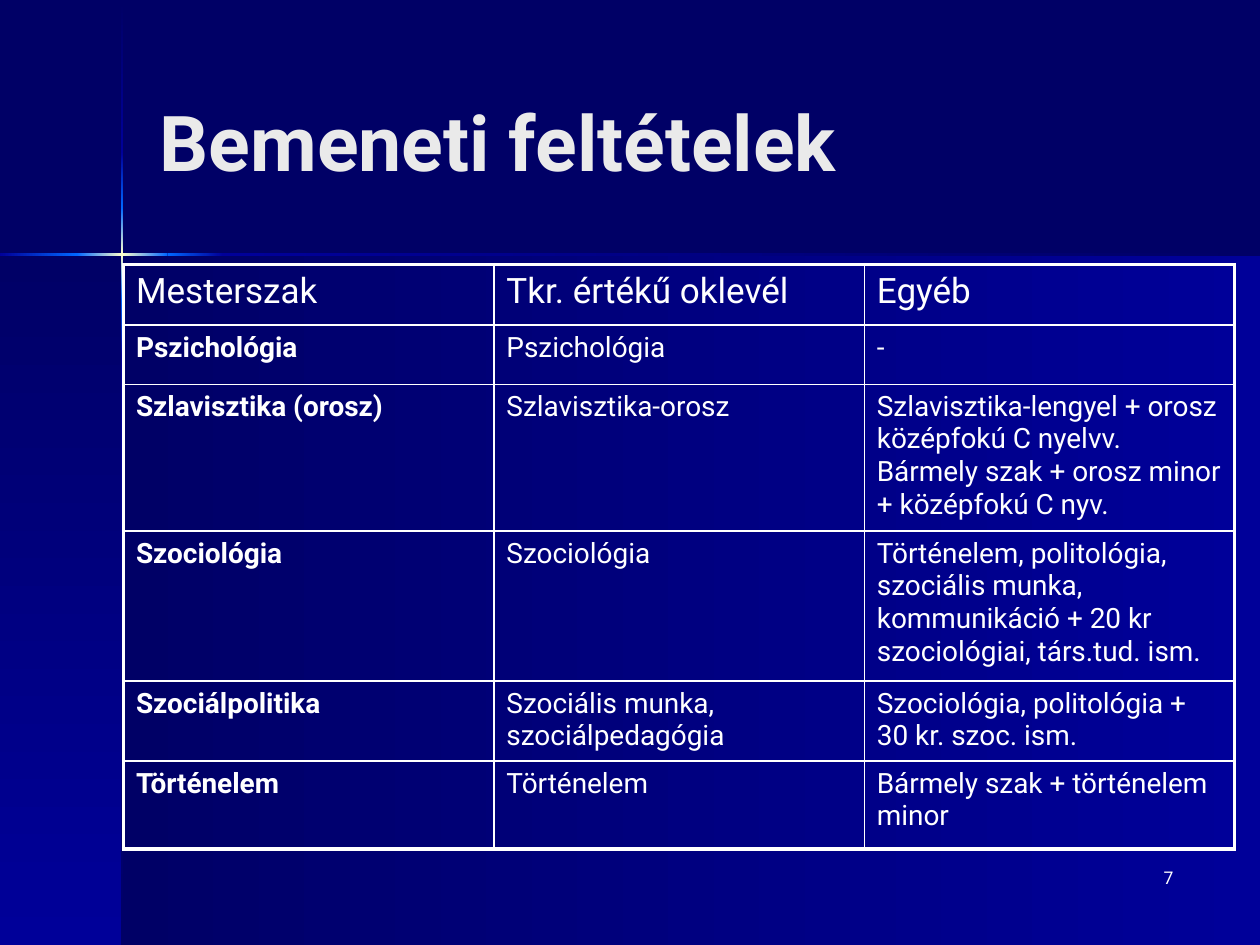
from dataclasses import dataclass
from itertools import pairwise

from lxml.etree import SubElement
from pptx import Presentation
from pptx.dml.color import RGBColor
from pptx.enum.shapes import MSO_SHAPE
from pptx.enum.text import MSO_ANCHOR, PP_ALIGN
from pptx.oxml.ns import qn
from pptx.slide import Slide
from pptx.table import _Cell
from pptx.text.text import _Paragraph
from pptx.util import Inches, Length, Pt


@dataclass(frozen=True)
class Theme:
    font: str = "Roboto"
    dark: str = "000066"
    edge: str = "000099"
    bright: str = "0066FF"
    glow: str = "FFFFCC"
    title: str = "EAEAEA"
    text: str = "FFFFFF"
    title_size: float = 44
    header_size: float = 20
    body_size: float = 16
    number_size: float = 10
    thin: float = 1
    thick: float = 2.25


@dataclass(frozen=True)
class Box:
    """Place on the slide grid, in columns and rows."""
    left: float
    top: float
    width: float
    height: float

    def lengths(self) -> list[Length]:
        return [grid(value) for value in (self.left, self.top, self.width, self.height)]


@dataclass(frozen=True)
class Programme:
    name: str
    degree: str
    other: str
    height: float


THEME = Theme()
COLUMNS, ROWS = 100, 75  # square grid cells, ten to the inch
CROSS_X, CROSS_Y, BEAM = 9.7, 20.2, 0.2
ACROSS, DOWN = 0, 90
HEADER = Programme("Mesterszak", "Tkr. értékű oklevél", "Egyéb", 4.8)
PROGRAMMES = [
    Programme("Pszichológia", "Pszichológia", "-", 4.7),
    Programme("Szlavisztika (orosz)", "Szlavisztika-orosz",
              "Szlavisztika-lengyel + orosz középfokú C nyelvv.\n"
              "Bármely szak + orosz minor + középfokú C nyv.", 11.3),
    Programme("Szociológia", "Szociológia",
              "Történelem, politológia, szociális munka, kommunikáció + 20 kr "
              "szociológiai, társ.tud. ism.", 11.9),
    Programme("Szociálpolitika", "Szociális munka, szociálpedagógia",
              "Szociológia, politológia + 30 kr. szoc. ism.", 6.3),
    Programme("Történelem", "Történelem", "Bármely szak + történelem minor", 7),
]


def grid(value: float) -> Length:
    return Inches(value / 10)


def add_gradient_box(page: Slide, box: Box, colors: tuple[str, ...], angle: int) -> None:
    shape = page.shapes.add_shape(MSO_SHAPE.RECTANGLE, *box.lengths())
    shape.shadow.inherit = False
    shape.line.fill.background()
    shape.fill.gradient()
    gradient = shape.element.spPr.find(qn("a:gradFill"))
    for child in list(gradient):
        gradient.remove(child)
    stops = SubElement(gradient, qn("a:gsLst"))
    for index, color in enumerate(colors):
        position = 100000 * index // (len(colors) - 1)
        stop = SubElement(stops, qn("a:gs"), pos=str(position))
        SubElement(stop, qn("a:srgbClr"), val=color)
    SubElement(gradient, qn("a:lin"), ang=str(angle * 60000), scaled="0")


def add_span(para: _Paragraph, text: str, size: float, color: str, bold: bool = False) -> None:
    for index, line in enumerate(text.split("\n")):
        if index:
            para.add_line_break()
        span = para.add_run()
        span.text = line
        span.font.name = THEME.font
        span.font.size = Pt(size)
        span.font.bold = bold
        span.font.color.rgb = RGBColor.from_string(color)


def add_text(page: Slide, box: Box, text: str, size: float, color: str, bold: bool,
             anchor: MSO_ANCHOR, align: PP_ALIGN) -> None:
    frame = page.shapes.add_textbox(*box.lengths()).text_frame
    frame.word_wrap = True
    frame.vertical_anchor = anchor
    para = frame.paragraphs[0]
    para.alignment = align
    add_span(para, text, size, color, bold)


def add_backdrop(page: Slide) -> None:
    # Lower panels
    panel = (THEME.dark, THEME.edge)
    height = ROWS - CROSS_Y
    add_gradient_box(page, Box(CROSS_X, CROSS_Y, COLUMNS - CROSS_X, height), panel, ACROSS)
    add_gradient_box(page, Box(0, CROSS_Y, CROSS_X, height), panel, DOWN)

    # Crossing beams of light, brightest where they meet
    beam = [
        (THEME.dark, THEME.edge),
        (THEME.edge, THEME.bright),
        (THEME.bright, THEME.glow, THEME.bright),
        (THEME.bright, THEME.edge),
        (THEME.edge, THEME.dark),
    ]
    for (start, end), colors in zip(pairwise([0.1, 12.1, 16.5, 23.8, 28.2, ROWS]), beam):
        place = Box(CROSS_X - BEAM / 2, start, BEAM, end - start)
        add_gradient_box(page, place, colors, DOWN)
    for (start, end), colors in zip(pairwise([0, 6.1, 13.3, 17.7, COLUMNS]), beam[1:]):
        place = Box(start, CROSS_Y - BEAM / 2, end - start, BEAM)
        add_gradient_box(page, place, colors, ACROSS)


def set_borders(cell: _Cell, outer: dict[str, bool]) -> None:
    properties = cell._tc.get_or_add_tcPr()
    for side, is_outer in outer.items():
        width = Pt(THEME.thick if is_outer else THEME.thin)
        line = SubElement(properties, qn(f"a:ln{side}"), w=str(width))
        fill = SubElement(line, qn("a:solidFill"))
        SubElement(fill, qn("a:srgbClr"), val=THEME.text)


def add_programme_table(page: Slide, box: Box) -> None:
    lines = [HEADER, *PROGRAMMES]
    table = page.shapes.add_table(len(lines), 3, *box.lengths()).table
    table.first_row = False
    table.horz_banding = False
    for column in table.columns:
        column.width = grid(box.width / 3)
    for row, programme in enumerate(lines):
        table.rows[row].height = grid(programme.height)
        size = THEME.body_size if row else THEME.header_size
        for column, text in enumerate((programme.name, programme.degree, programme.other)):
            cell = table.cell(row, column)
            set_borders(cell, {"L": column == 0, "R": column == 2,
                               "T": row == 0, "B": row == len(lines) - 1})
            cell.fill.background()
            para = cell.text_frame.paragraphs[0]
            spacing = SubElement(para._p.get_or_add_pPr(), qn("a:spcBef"))
            SubElement(spacing, qn("a:spcPct"), val="20000")
            add_span(para, text, size, THEME.text, bold=row > 0 and column == 0)


def main() -> None:
    deck = Presentation()
    deck.slide_width, deck.slide_height = grid(COLUMNS), grid(ROWS)
    page = deck.slides.add_slide(deck.slide_layouts[6])
    page.background.fill.solid()
    page.background.fill.fore_color.rgb = RGBColor.from_string(THEME.dark)

    add_backdrop(page)
    # Page number and title
    add_text(page, Box(73.3, 68.3, 20.8, 5), "7", THEME.number_size, THEME.text,
             False, MSO_ANCHOR.TOP, PP_ALIGN.RIGHT)
    add_text(page, Box(11.7, 3.3, 82.5, 15.7), "Bemeneti feltételek", THEME.title_size,
             THEME.title, True, MSO_ANCHOR.MIDDLE, PP_ALIGN.LEFT)
    add_programme_table(page, Box(9.8, 21, 88.2, 46))
    deck.save("out.pptx")


if __name__ == "__main__":
    main()
